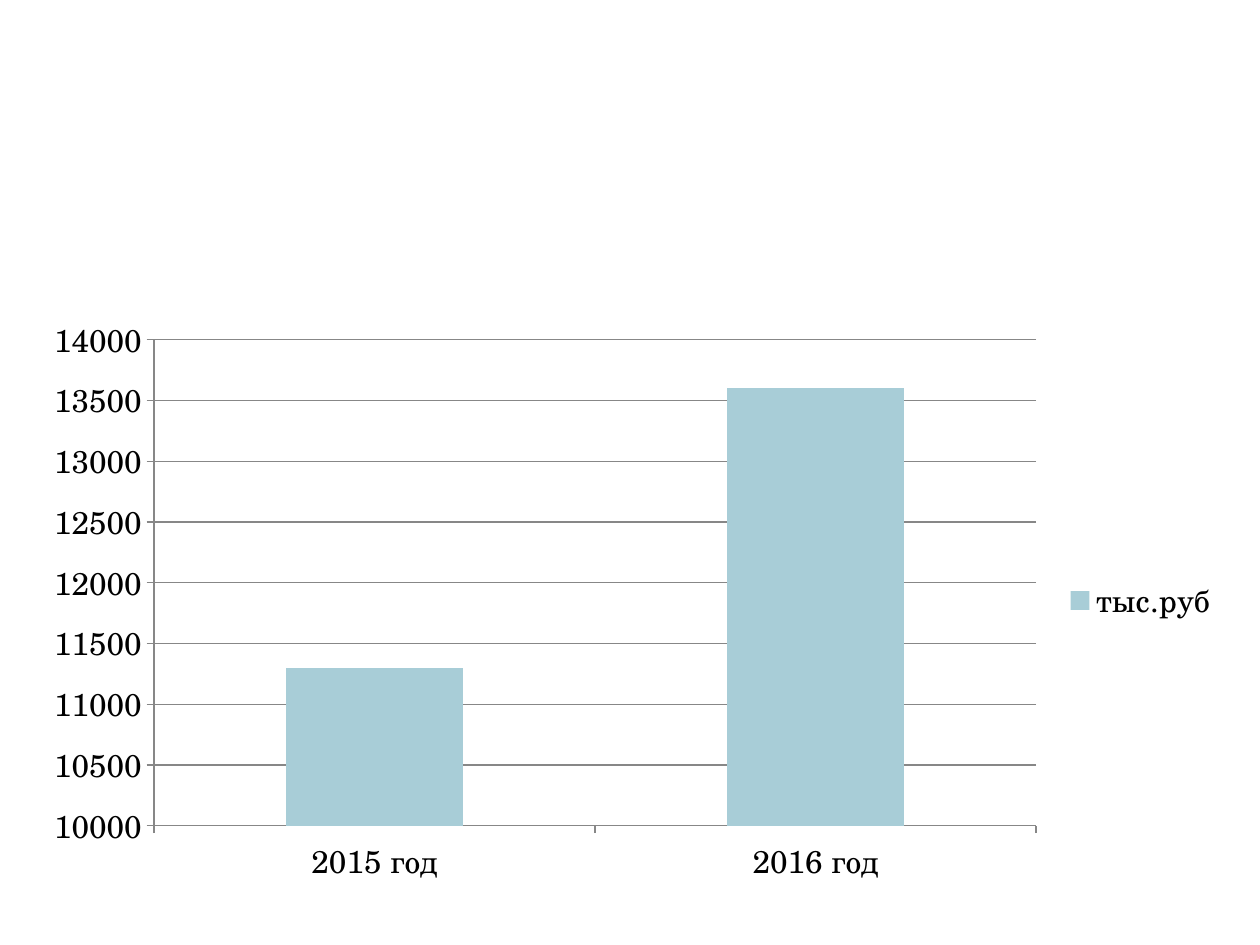
from pptx import Presentation
from pptx.chart.data import CategoryChartData
from pptx.dml.color import RGBColor
from pptx.enum.chart import XL_CHART_TYPE as ChartType
from pptx.enum.chart import XL_LEGEND_POSITION as LegendPosition
from pptx.enum.chart import XL_TICK_MARK as TickMark
from pptx.util import Pt

YEARS = ("2015 год", "2016 год")
SERIES_NAME = "тыс.руб"
AMOUNTS = (11300, 13600)
AXIS_RANGE = (10000, 14000)
AXIS_STEP = 500

FONT = "TeX Gyre Schola"
BLACK = RGBColor(0x00, 0x00, 0x00)
GRAY = RGBColor(0x87, 0x87, 0x87)
BLUE = RGBColor(0xA8, 0xCD, 0xD7)

PX = 914400 // 126
SLIDE_SIZE = (1260, 945)
CHART_BOX = (30, 305, 1201, 591)


def style_line(line):
    line.color.rgb = GRAY
    line.width = Pt(0.75)


def main():
    presentation = Presentation()
    presentation.slide_width, presentation.slide_height = (n * PX for n in SLIDE_SIZE)
    slide = presentation.slides.add_slide(presentation.slide_layouts[6])

    data = CategoryChartData()
    data.categories = YEARS
    data.add_series(SERIES_NAME, AMOUNTS)
    box = [n * PX for n in CHART_BOX]
    chart = slide.shapes.add_chart(ChartType.COLUMN_STACKED, *box, data).chart
    chart.has_title = False
    chart.font.name = FONT
    chart.font.size = Pt(18)
    chart.font.color.rgb = BLACK

    chart.has_legend = True
    chart.legend.position = LegendPosition.RIGHT
    chart.legend.include_in_layout = False

    plot = chart.plots[0]
    plot.vary_by_categories = False
    plot.gap_width = 150
    plot.overlap = 100
    fill = plot.series[0].format.fill
    fill.solid()
    fill.fore_color.rgb = BLUE

    for axis in (chart.category_axis, chart.value_axis):
        axis.major_tick_mark = TickMark.OUTSIDE
        axis.minor_tick_mark = TickMark.NONE
        style_line(axis.format.line)

    value_axis = chart.value_axis
    value_axis.minimum_scale, value_axis.maximum_scale = AXIS_RANGE
    value_axis.major_unit = AXIS_STEP
    value_axis.has_major_gridlines = True
    style_line(value_axis.major_gridlines.format.line)

    presentation.save("out.pptx")


if __name__ == "__main__":
    main()
